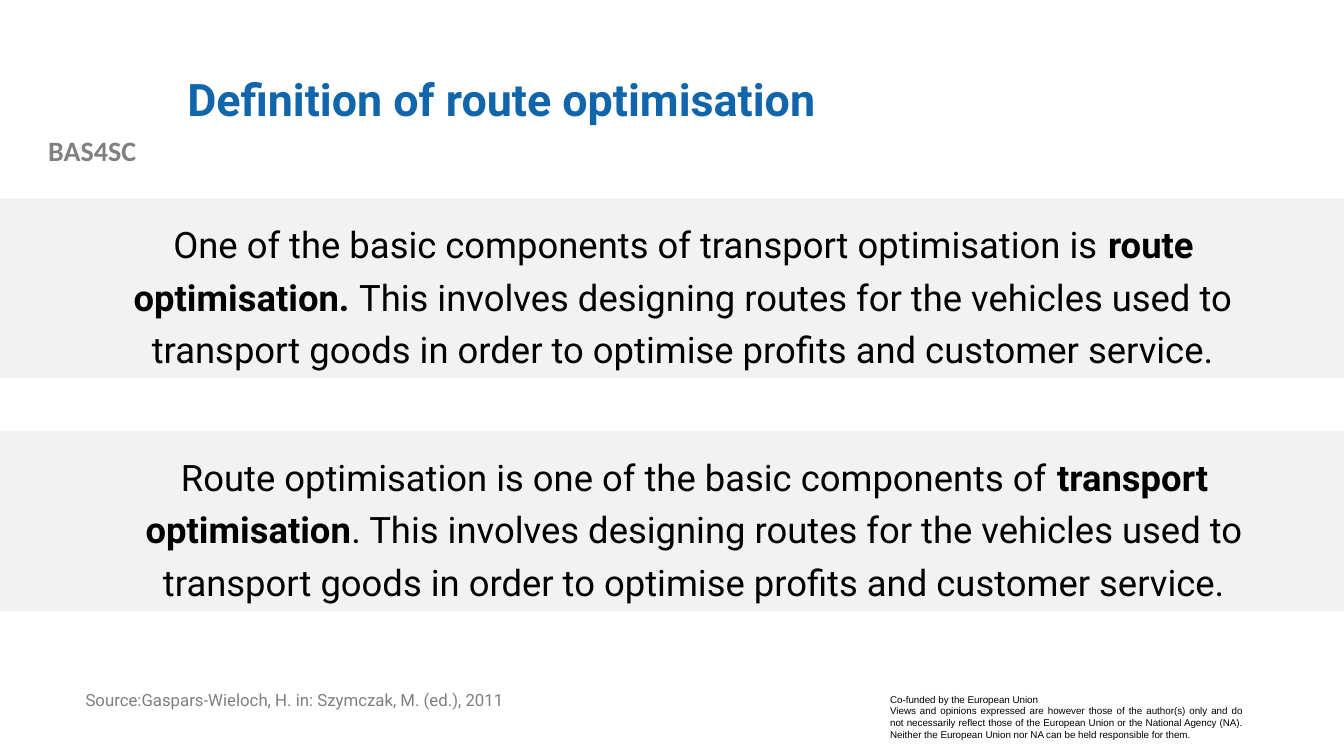
from dataclasses import dataclass

import pptx
import pptx.dml.color
import pptx.enum.shapes
import pptx.enum.text
import pptx.util

Inches = pptx.util.Inches
ALIGN = pptx.enum.text.PP_ALIGN
ANCHOR = pptx.enum.text.MSO_ANCHOR


@dataclass(frozen=True)
class Theme:
    heading_font: str = "Roboto"
    label_font: str = "Calibri"
    notice_font: str = "Arial"
    blue: str = "1065AB"
    black: str = "000000"
    label_grey: str = "808080"
    source_grey: str = "7F7F7F"
    band_grey: str = "F2F2F2"
    title_size: int = 32
    body_size: int = 26
    label_size: int = 20
    source_size: int = 12
    notice_size: int = 7


theme = Theme()


def add_text(box, paragraphs, font, size, color, align=ALIGN.LEFT, spacing=1.0, anchor=ANCHOR.TOP):
    """Add a text box; each paragraph is a list of (text, bold) runs."""
    frame = slide.shapes.add_textbox(*map(Inches, box)).text_frame
    frame.word_wrap = True
    frame.vertical_anchor = anchor
    for index, runs in enumerate(paragraphs):
        paragraph = frame.add_paragraph() if index else frame.paragraphs[0]
        paragraph.alignment = align
        paragraph.line_spacing = spacing
        for text, bold in runs:
            run = paragraph.add_run()
            run.text = text
            run.font.name = font
            run.font.size = pptx.util.Pt(size)
            run.font.bold = bold
            run.font.color.rgb = pptx.dml.color.RGBColor.from_string(color)


deck = pptx.Presentation()
deck.slide_width, deck.slide_height = Inches(13.33), Inches(7.5)
slide = deck.slides.add_slide(deck.slide_layouts[6])

add_text((0, 1.28, 1.83, 0.44), [[("BAS4SC", True)]],
         theme.label_font, theme.label_size, theme.label_grey, ALIGN.CENTER)
add_text((1.76, 0.4, 10.66, 1.22), [[("Definition of route optimisation", True)]],
         theme.heading_font, theme.title_size, theme.blue, spacing=0.9, anchor=ANCHOR.MIDDLE)

explanation = ("This involves designing routes for the vehicles used to transport goods "
               "in order to optimise profits and customer service.")
definitions = [
    (1.97, 1.03, 11.5, [("One of the basic components of transport optimisation is", False),
                        (" route optimisation. ", True),
                        (explanation, False)]),
    (4.28, 0.93, 11.92, [("Route optimisation is one of the basic components of ", False),
                         ("transport optimisation", True),
                         (". " + explanation, False)]),
]
for top, left, width, runs in definitions:
    band = slide.shapes.add_shape(pptx.enum.shapes.MSO_SHAPE.RECTANGLE,
                                  0, Inches(top), deck.slide_width, Inches(1.78))
    band.shadow.inherit = False
    band.fill.solid()
    band.fill.fore_color.rgb = pptx.dml.color.RGBColor.from_string(theme.band_grey)
    band.line.fill.background()
    add_text((left, top + 0.1, width, 1.69), [runs],
             theme.heading_font, theme.body_size, theme.black, ALIGN.CENTER, spacing=1.2)

add_text((0.75, 6.82, 5.6, 0.52),
         [[("Source:Gaspars-Wieloch, H. in: Szymczak, M. (ed.), 2011", False)]],
         theme.heading_font, theme.source_size, theme.source_grey, spacing=0.9)
add_text((8.73, 6.83, 3.69, 0.57),
         [[("Co-funded by the European Union", False)],
          [("Views and opinions expressed are however those of the author(s) only and do not "
            "necessarily reflect those of the European Union or the National Agency (NA). "
            "Neither the European Union nor NA can be held responsible for them.", False)]],
         theme.notice_font, theme.notice_size, theme.black, ALIGN.JUSTIFY)

deck.save("out.pptx")
